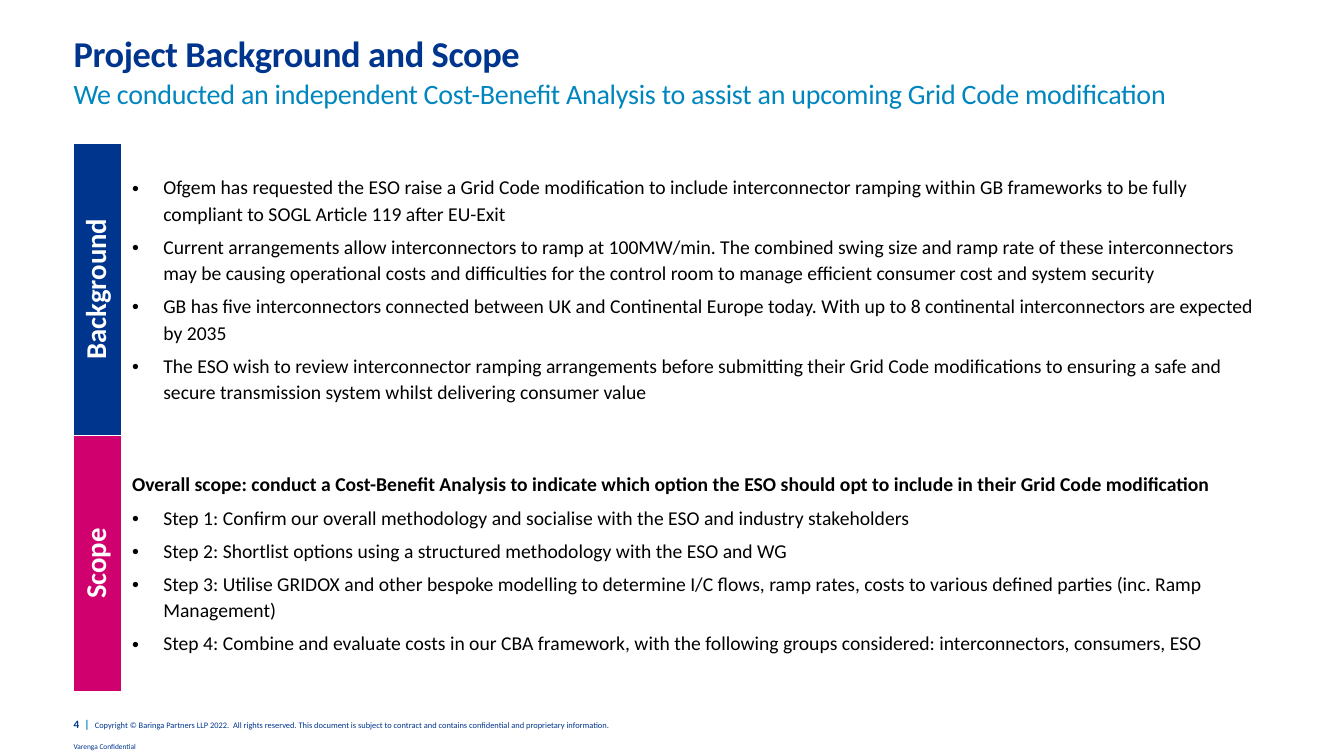
from lxml import etree
from pptx import Presentation, util as u
from pptx.dml.color import RGBColor
from pptx.enum import shapes, text
from pptx.oxml.ns import qn

NAVY, TEAL, PINK, WHITE, BLACK = "00358E", "0086BF", "D0006F", "FFFFFF", "000000"
WIDTH, HEIGHT, LEFT = 13.33, 7.5, 0.73

TITLE = "Project Background and Scope"
SUBTITLE = "We conducted an independent Cost-Benefit Analysis to assist an upcoming Grid Code modification"
FOOTER = [
    ("4  ", dict(size=8, color=NAVY, bold=True)),
    ("|  ", dict(size=8, color=TEAL, bold=True)),
    ("Copyright © Baringa Partners LLP 2022.  All rights reserved. This document is subject to "
     "contract and contains confidential and proprietary information.", dict(size=6, color=NAVY)),
]
CONFIDENTIAL = "Varenga Confidential"

# label, label colour, row height, heading, bullets
SECTIONS = [
    ("Background", NAVY, 2.9, None, [
        "Ofgem has requested the ESO raise a Grid Code modification to include interconnector "
        "ramping within GB frameworks to be fully compliant to SOGL Article 119 after EU-Exit",
        "Current arrangements allow interconnectors to ramp at 100MW/min. The combined swing size "
        "and ramp rate of these interconnectors may be causing operational costs and difficulties "
        "for the control room to manage efficient consumer cost and system security",
        "GB has five interconnectors connected between UK and Continental Europe today. With up to "
        "8 continental interconnectors are expected by 2035",
        "The ESO wish to review interconnector ramping arrangements before submitting their Grid "
        "Code modifications to ensuring a safe and secure transmission system whilst delivering "
        "consumer value",
    ]),
    ("Scope", PINK, 2.54,
     "Overall scope: conduct a Cost-Benefit Analysis to indicate which option the ESO should opt "
     "to include in their Grid Code modification", [
        "Step 1: Confirm our overall methodology and socialise with the ESO and industry stakeholders",
        "Step 2: Shortlist options using a structured methodology with the ESO and WG",
        "Step 3: Utilise GRIDOX and other bespoke modelling to determine I/C flows, ramp rates, "
        "costs to various defined parties (inc. Ramp Management)",
        "Step 4: Combine and evaluate costs in our CBA framework, with the following groups "
        "considered: interconnectors, consumers, ESO",
     ]),
]
COLUMNS = [0.48, 11.4]
INDENT = 0.31


def rgb(hex_color):
    return RGBColor.from_string(hex_color)


def add_run(paragraph, words, size, color, bold=False, spacing=0):
    """Add a run; spacing is the letter spacing in points."""
    run = paragraph.add_run()
    run.text = words
    for name, value in dict(name="Calibri", size=u.Pt(size), bold=bold).items():
        setattr(run.font, name, value)
    run.font.color.rgb = rgb(color)
    if spacing:
        run.font._element.set("spc", str(round(spacing * 100)))


def set_frame(frame, left=0, top=0, right=0, bottom=0, wrap=True):
    margins = dict(margin_left=left, margin_top=top, margin_right=right, margin_bottom=bottom)
    for name, value in margins.items():
        setattr(frame, name, u.Inches(value))
    frame.word_wrap = wrap
    frame.vertical_anchor = text.MSO_ANCHOR.TOP
    return frame.paragraphs[0]


def add_line(slide, top, width, height, runs, line_spacing=1.0, inset_top=0):
    box = slide.shapes.add_textbox(*map(u.Inches, (LEFT, top, width, height)))
    paragraph = set_frame(box.text_frame, top=inset_top)
    paragraph.line_spacing = line_spacing
    for words, style in runs:
        add_run(paragraph, words, **style)


def add_confidential_tag(slide):
    left, top = 0.68, 7.33
    tag = slide.shapes.add_shape(shapes.MSO_SHAPE.RECTANGLE,
                                 *map(u.Inches, (left, top, 0.72, HEIGHT - top)))
    tag.shadow.inherit = False
    tag.line.fill.background()
    tag.fill.solid()
    tag.fill.fore_color.rgb = rgb(WHITE)
    tint = tag._element.spPr.find(".//" + qn("a:srgbClr"))
    etree.SubElement(tint, qn("a:alpha"), val="70000")
    paragraph = set_frame(tag.text_frame, 0.05, 0.03, 0.05, 0.07, wrap=False)
    paragraph.alignment = text.PP_ALIGN.LEFT
    add_run(paragraph, CONFIDENTIAL, 5.3, NAVY)


def add_borders(cell):
    properties = cell._tc.get_or_add_tcPr()
    for side in ("lnL", "lnR", "lnT", "lnB"):
        line = etree.SubElement(properties, qn("a:" + side), w=str(u.Pt(1)))
        fill = etree.SubElement(line, qn("a:solidFill"))
        etree.SubElement(fill, qn("a:srgbClr"), val=WHITE)


def add_bullet(paragraph):
    properties = paragraph._p.get_or_add_pPr()
    properties.set("marL", str(u.Inches(INDENT)))
    properties.set("indent", str(-u.Inches(INDENT)))
    etree.SubElement(properties, qn("a:buFont"), typeface="Arial")
    etree.SubElement(properties, qn("a:buChar"), char="•")


def fill_label(cell, label, color):
    cell.fill.solid()
    cell.fill.fore_color.rgb = rgb(color)
    cell._tc.get_or_add_tcPr().set("vert", "vert270")
    paragraph = cell.text_frame.paragraphs[0]
    paragraph.alignment = text.PP_ALIGN.CENTER
    add_run(paragraph, label, 20.5, WHITE, bold=True)


def fill_details(cell, heading, bullets):
    cell.fill.background()
    lines = [(heading, True)] if heading else []
    lines += [(bullet, False) for bullet in bullets]
    for index, (words, is_heading) in enumerate(lines):
        frame = cell.text_frame
        paragraph = frame.add_paragraph() if index else frame.paragraphs[0]
        if not is_heading:
            add_bullet(paragraph)
        paragraph.line_spacing = 1.1
        paragraph.space_after = u.Pt(5)
        add_run(paragraph, words, 14, BLACK, bold=is_heading)


def add_sections(slide):
    heights = [section[2] for section in SECTIONS]
    area = (LEFT, 1.42, sum(COLUMNS), sum(heights))
    table = slide.shapes.add_table(len(SECTIONS), len(COLUMNS), *map(u.Inches, area)).table
    table.first_row = table.horz_banding = False
    for column, width in zip(table.columns, COLUMNS):
        column.width = u.Inches(width)
    for row, (label, color, height, heading, bullets) in zip(table.rows, SECTIONS):
        row.height = u.Inches(height)
        for cell in row.cells:
            add_borders(cell)
            cell.vertical_anchor = text.MSO_ANCHOR.MIDDLE
        fill_label(row.cells[0], label, color)
        fill_details(row.cells[1], heading, bullets)


def main():
    deck = Presentation()
    deck.slide_width, deck.slide_height = u.Inches(WIDTH), u.Inches(HEIGHT)
    slide = deck.slides.add_slide(deck.slide_layouts[6])
    add_line(slide, 7.12, 7.28, 0.27, FOOTER)
    add_confidential_tag(slide)
    add_line(slide, 0.39, sum(COLUMNS), 0.36,
             [(TITLE, dict(size=26, color=NAVY, bold=True, spacing=-0.3))], line_spacing=0.8)
    add_sections(slide)
    add_line(slide, 0.72, 12.1, 0.38,
             [(SUBTITLE, dict(size=20, color=TEAL, spacing=-0.2))], line_spacing=0.9, inset_top=0.08)
    deck.save("out.pptx")


if __name__ == "__main__":
    main()
